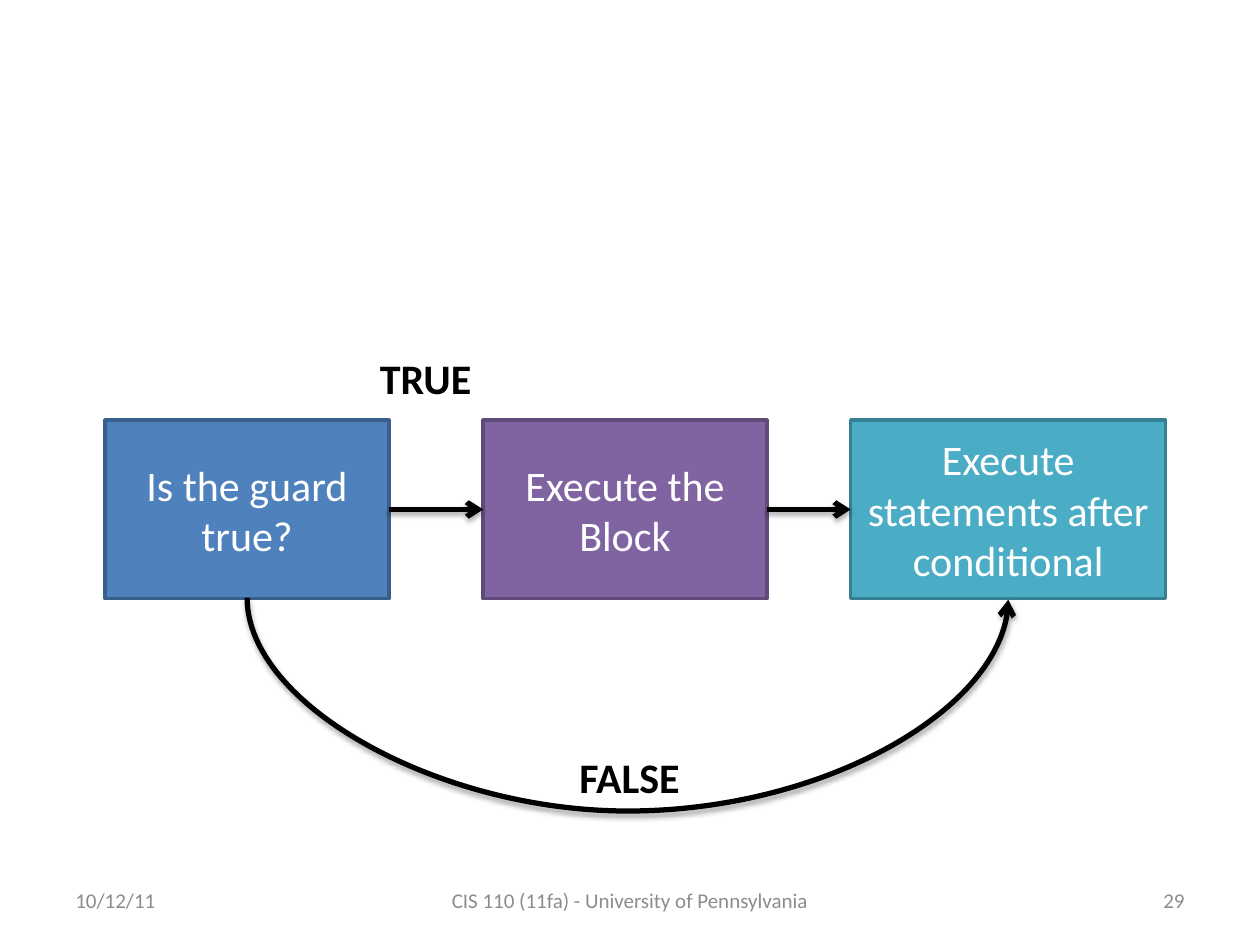
from lxml.etree import SubElement
from pptx import Presentation
from pptx.dml.color import RGBColor
from pptx.enum.shapes import MSO_CONNECTOR, MSO_SHAPE
from pptx.enum.text import MSO_ANCHOR, PP_ALIGN
from pptx.oxml.ns import qn
from pptx.util import Cm, Pt

BLACK = RGBColor(0x00, 0x00, 0x00)
WHITE = RGBColor(0xFF, 0xFF, 0xFF)
GRAY = RGBColor(0x8C, 0x8C, 0x8C)
BLUE, BLUE_EDGE = RGBColor(0x4F, 0x81, 0xBD), RGBColor(0x3A, 0x5F, 0x8C)
PURPLE, PURPLE_EDGE = RGBColor(0x80, 0x64, 0xA2), RGBColor(0x5F, 0x4A, 0x78)
TEAL, TEAL_EDGE = RGBColor(0x4B, 0xAC, 0xC6), RGBColor(0x37, 0x7F, 0x92)

BOX_TOP, BOX_HEIGHT = 8.47, 3.6
FOOTER_TOP, FOOTER_HEIGHT = 17.65, 1.01
CURVE_DROP = 4.3
CURVE_OFFSET = 0.04  # height difference of the curve's two ends


class FlowPage:
    font = "Calibri"
    text_size = 24
    footer_size = 12

    def __init__(self, deck):
        self.page = deck.slides.add_slide(deck.slide_layouts[6])

    def set_text(self, shape, text, size, color, align, bold=False):
        frame = shape.text_frame
        frame.text = text
        para = frame.paragraphs[0]
        para.alignment = align
        for span in para.runs:
            span.font.name = self.font
            span.font.size = Pt(size)
            span.font.bold = bold
            span.font.color.rgb = color

    def step(self, text, left, width, fill, edge):
        box = self.page.shapes.add_shape(
            MSO_SHAPE.RECTANGLE, Cm(left), Cm(BOX_TOP), Cm(width), Cm(BOX_HEIGHT))
        box.shadow.inherit = False
        box.fill.solid()
        box.fill.fore_color.rgb = fill
        box.line.color.rgb = edge
        box.line.width = Pt(2)
        box.text_frame.word_wrap = True
        box.text_frame.vertical_anchor = MSO_ANCHOR.MIDDLE
        self.set_text(box, text, self.text_size, WHITE, PP_ALIGN.CENTER)
        return box

    def label(self, text, left, top):
        box = self.page.shapes.add_textbox(Cm(left), Cm(top), Cm(2.54), Cm(1.27))
        box.text_frame.word_wrap = False
        self.set_text(box, text, self.text_size, BLACK, PP_ALIGN.LEFT, bold=True)

    def footer(self, text, left, width, align):
        box = self.page.shapes.add_textbox(
            Cm(left), Cm(FOOTER_TOP), Cm(width), Cm(FOOTER_HEIGHT))
        box.text_frame.word_wrap = True
        box.text_frame.vertical_anchor = MSO_ANCHOR.MIDDLE
        self.set_text(box, text, self.footer_size, GRAY, align)

    def style_arrow(self, arrow):
        arrow.line.color.rgb = BLACK
        arrow.line.width = Pt(3)
        properties = arrow.element.spPr
        SubElement(properties.find(qn("a:ln")), qn("a:tailEnd"), type="arrow")
        effects = SubElement(properties, qn("a:effectLst"))
        shadow = SubElement(effects, qn("a:outerShdw"), blurRad=str(Pt(3.1)),
                            dist=str(Pt(1.8)), dir="5400000", rotWithShape="0")
        color = SubElement(shadow, qn("a:srgbClr"), val=str(BLACK))
        SubElement(color, qn("a:alpha"), val="35000")

    def arrow(self, source, target):
        arrow = self.page.shapes.add_connector(MSO_CONNECTOR.STRAIGHT, 0, 0, 0, 0)
        arrow.begin_connect(source, 3)
        arrow.end_connect(target, 1)
        self.style_arrow(arrow)

    def curve_below(self, source, target):
        start = source.left + source.width // 2
        end = target.left + target.width // 2
        offset, span = Cm(CURVE_OFFSET), end - start
        left = (start + end - offset) // 2
        top = source.top + source.height - span // 2
        curve = self.page.shapes.add_connector(
            MSO_CONNECTOR.CURVE, left, top, left + offset, top + span)
        # A quarter turn makes the tall, narrow connector hang below the boxes
        frame = curve.element.spPr.find(qn("a:xfrm"))
        frame.set("rot", "16200000")
        frame.set("flipH", "1")
        guides = curve.element.spPr.find(qn("a:prstGeom")).find(qn("a:avLst"))
        bend = round(CURVE_DROP / CURVE_OFFSET * 100000)
        SubElement(guides, qn("a:gd"), name="adj1", fmla=f"val {bend}")
        self.style_arrow(curve)


def main():
    deck = Presentation()
    deck.slide_width, deck.slide_height = Cm(25.4), Cm(19.05)
    flow = FlowPage(deck)

    # Footer
    flow.footer("10/12/11", 1.27, 5.93, PP_ALIGN.LEFT)
    flow.footer("CIS 110 (11fa) - University of Pennsylvania", 8.68, 8.04, PP_ALIGN.CENTER)
    flow.footer("29", 18.2, 5.93, PP_ALIGN.RIGHT)

    # Steps
    guard = flow.step("Is the guard true?", 2.12, 5.72, BLUE, BLUE_EDGE)
    block = flow.step("Execute the Block", 9.74, 5.72, PURPLE, PURPLE_EDGE)
    after = flow.step("Execute statements after conditional", 17.15, 6.35, TEAL, TEAL_EDGE)

    # Arrows
    flow.arrow(guard, block)
    flow.arrow(block, after)
    flow.curve_below(guard, after)

    # Branch labels
    flow.label("FALSE", 11.43, 15.03)
    flow.label("TRUE", 7.41, 6.99)

    deck.save("out.pptx")


if __name__ == "__main__":
    main()
